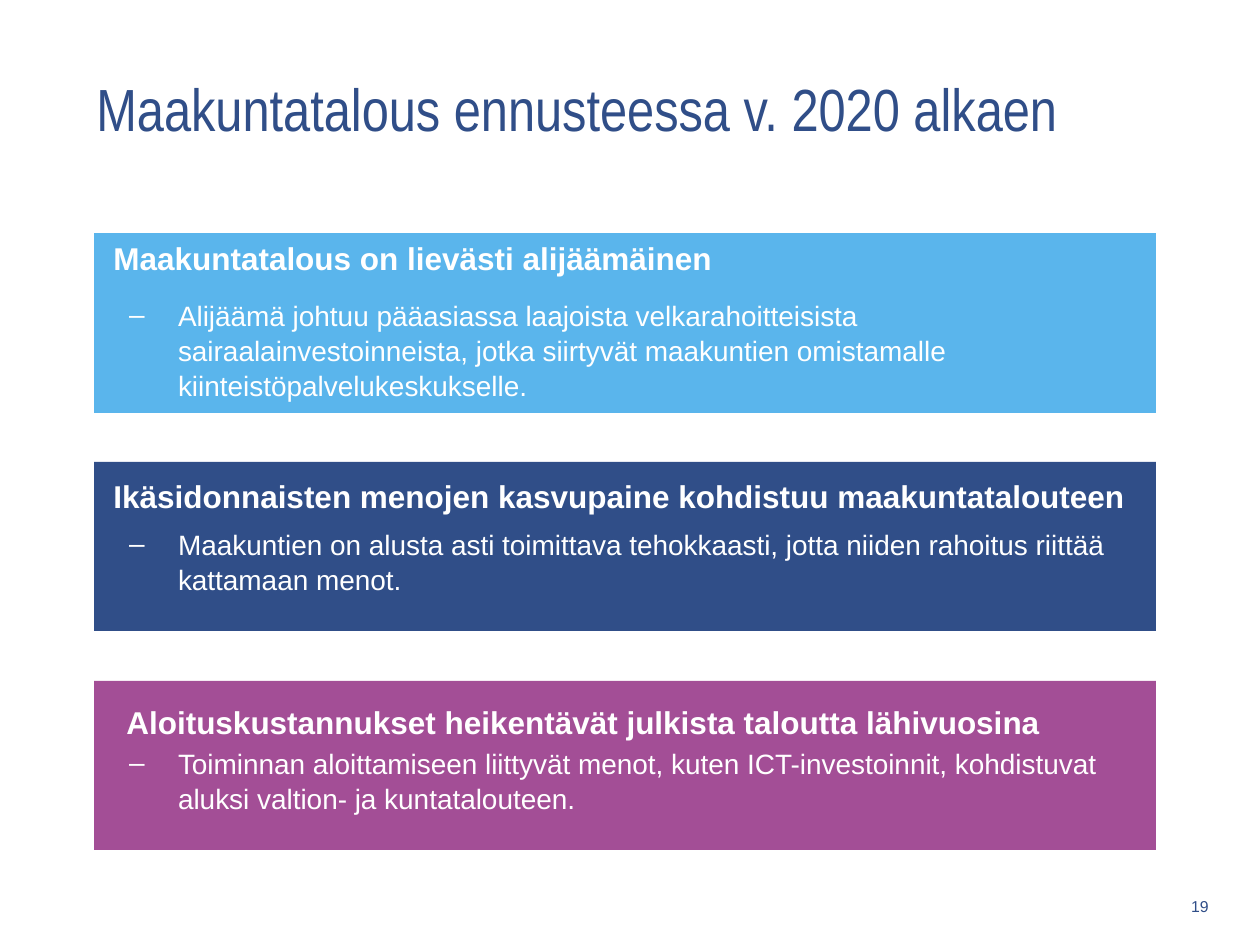
from lxml.etree import SubElement
from pptx import Presentation
from pptx.dml.color import RGBColor
from pptx.enum.shapes import MSO_SHAPE
from pptx.enum.text import MSO_ANCHOR, PP_ALIGN
from pptx.oxml.ns import qn
from pptx.util import Pt

PX_PER_INCH = 126
WHITE = RGBColor(0xFF, 0xFF, 0xFF)
SKY = RGBColor(0x5A, 0xB5, 0xEC)
NAVY = RGBColor(0x30, 0x4E, 0x88)
PURPLE = RGBColor(0xA3, 0x4E, 0x96)

PANEL_LEFT, PANEL_WIDTH = 94, 1062
HEADING_RIGHT, HEADING_HEIGHT = 1143, 50

# Panel top, height, colour, body; heading left, top, wording
PANELS = [
    (233, 180, SKY,
     "Alijäämä johtuu pääasiassa laajoista velkarahoitteisista "
     "sairaalainvestoinneista, jotka siirtyvät maakuntien omistamalle "
     "kiinteistöpalvelukeskukselle.",
     101, 233, "Maakuntatalous on lievästi alijäämäinen"),
    (462, 169, NAVY,
     "Maakuntien on alusta asti toimittava tehokkaasti, jotta niiden "
     "rahoitus riittää kattamaan menot.",
     101, 471, "Ikäsidonnaisten menojen kasvupaine kohdistuu maakuntatalouteen"),
    (681, 169, PURPLE,
     "Toiminnan aloittamiseen liittyvät menot, kuten ICT-investoinnit, "
     "kohdistuvat aluksi valtion- ja kuntatalouteen.",
     114, 697, "Aloituskustannukset heikentävät julkista taloutta lähivuosina"),
]


def px(length):
    return round(length * 914400 / PX_PER_INCH)


def style_font(para, size, color, name="Arial", bold=False):
    para.font.size = Pt(size)
    para.font.name = name
    para.font.bold = bold
    para.font.color.rgb = color


def add_text(page, bounds, text, size, color, name="Arial", bold=False,
             align=PP_ALIGN.LEFT, anchor=MSO_ANCHOR.TOP):
    frame = page.shapes.add_textbox(*map(px, bounds)).text_frame
    frame.word_wrap = True
    frame.vertical_anchor = anchor
    para = frame.paragraphs[0]
    para.text = text
    para.alignment = align
    style_font(para, size, color, name, bold)


def add_dash_bullet(para, indent):
    properties = para._p.get_or_add_pPr()
    properties.set("marL", str(px(indent)))
    properties.set("indent", str(-px(indent)))
    SubElement(properties, qn("a:buFont")).set("typeface", "Arial")
    SubElement(properties, qn("a:buChar")).set("char", "‒")


def add_panel(page, top, height, color, text):
    panel = page.shapes.add_shape(
        MSO_SHAPE.RECTANGLE, *map(px, (PANEL_LEFT, top, PANEL_WIDTH, height)))
    panel.shadow.inherit = False
    panel.fill.solid()
    panel.fill.fore_color.rgb = color
    panel.line.fill.background()

    frame = panel.text_frame
    frame.word_wrap = True
    frame.vertical_anchor = MSO_ANCHOR.TOP
    frame.margin_left, frame.margin_top = px(35), px(64)
    frame.margin_right = frame.margin_bottom = px(25)
    para = frame.paragraphs[0]
    para.text = text
    para.alignment = PP_ALIGN.LEFT
    para.line_spacing = 1.04
    para.space_after = Pt(6)
    add_dash_bullet(para, 49)
    style_font(para, 16, WHITE)


def main():
    deck = Presentation()
    deck.slide_width, deck.slide_height = px(1260), px(945)
    page = deck.slides.add_slide(deck.slide_layouts[6])

    # Title and page number
    add_text(page, (84, 26, 1042, 164), "Maakuntatalous ennusteessa v. 2020 alkaen",
             34, NAVY, name="Arial Narrow", anchor=MSO_ANCHOR.MIDDLE)
    add_text(page, (1155, 886, 66, 40), "19", 9, NAVY,
             align=PP_ALIGN.RIGHT, anchor=MSO_ANCHOR.MIDDLE)

    # Coloured panels with their headings on top
    for top, height, color, body, heading_left, heading_top, heading in PANELS:
        add_panel(page, top, height, color, body)
        bounds = (heading_left, heading_top,
                  HEADING_RIGHT - heading_left, HEADING_HEIGHT)
        add_text(page, bounds, heading, 18, WHITE, bold=True)

    deck.save("out.pptx")


if __name__ == "__main__":
    main()
